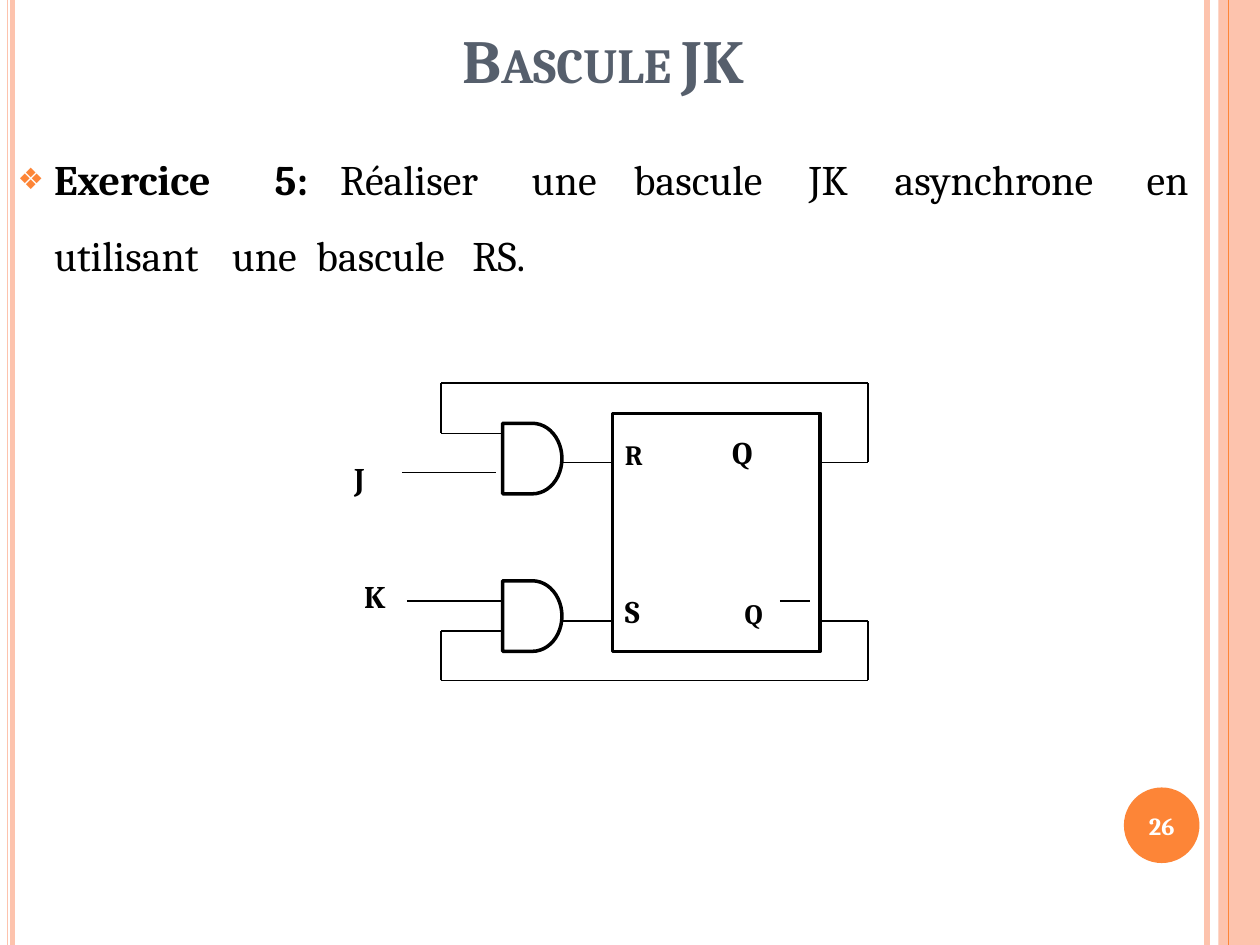
from dataclasses import dataclass
from itertools import pairwise

from lxml.etree import SubElement
from pptx import Presentation
from pptx.dml.color import RGBColor
from pptx.enum.shapes import MSO_CONNECTOR, MSO_SHAPE
from pptx.enum.text import MSO_ANCHOR, PP_ALIGN
from pptx.oxml.ns import qn
from pptx.util import Inches, Pt


@dataclass(frozen=True)
class Theme:
    font: str = "Cambria"
    bullet_font: str = "Arial"
    ink: str = "000000"
    title_ink: str = "565F6C"
    accent: str = "FD8537"
    pale: str = "FDC3AD"
    white: str = "FFFFFF"
    title: float = 35
    small_caps: float = 28
    body: float = 24
    label: float = 18
    pin: float = 16
    number: float = 14
    leading: float = 1.08


THEME = Theme()
WIDTH, HEIGHT = 10, 7.5

# Content: title runs, then the words of the exercise as (left, text, bold)
TITLE = [("B", THEME.title), ("ASCULE ", THEME.small_caps), ("JK", THEME.title)]
PAGE_NUMBER = "26"
BULLET, BULLET_INDENT = "❖", 0.29
EXERCISE = [
    [(0.14, "Exercice", True), (2.18, "5:", True), (2.7, "Réaliser", False),
     (4.22, "une", False), (5.03, "bascule", False), (6.42, "JK", False),
     (7.1, "asynchrone", False), (9.1, "en", False)],
    [(0.43, "utilisant", False), (1.84, "une", False),
     (2.51, "bascule", False), (3.75, "RS.", False)],
]
EXERCISE_TOP, EXERCISE_PITCH = 1.26, 0.6

# Page frame: vertical rails as (x, colour, points)
RAILS = [(0.06, THEME.pale, 1), (0.1, THEME.pale, 2.8), (9.58, THEME.pale, 3)]
BAND_LEFT, BAND_LINE = 9.67, 9.75
BADGE = (8.92, 6.25, 0.6, 0.6)

# Circuit: blocks, then wires as chains of corner points
LATCH = (4.86, 3.28, 1.65, 1.89)
LATCH_RIGHT = LATCH[0] + LATCH[2]
GATE_LEFT, GATE_WIDTH, GATE_HEIGHT = 3.99, 0.47, 0.56
GATE_TOPS = (3.36, 4.61)
GATE_RIGHT = GATE_LEFT + GATE_WIDTH
LOOP_LEFT, LOOP_RIGHT = 3.5, 6.89
Q_ROW, NOT_Q_ROW = 3.67, 4.93
WIRES = [
    [(GATE_RIGHT, Q_ROW), (LATCH[0], Q_ROW)],
    [(GATE_RIGHT, NOT_Q_ROW), (LATCH[0], NOT_Q_ROW)],
    [(3.19, 3.75), (3.94, 3.75)],
    [(3.23, 4.77), (GATE_LEFT, 4.77)],
    [(6.19, 4.77), (6.43, 4.77)],
    [(LATCH_RIGHT, Q_ROW), (LOOP_RIGHT, Q_ROW), (LOOP_RIGHT, 3.04),
     (LOOP_LEFT, 3.04), (LOOP_LEFT, 3.44), (GATE_LEFT, 3.44)],
    [(LATCH_RIGHT, NOT_Q_ROW), (LOOP_RIGHT, NOT_Q_ROW), (LOOP_RIGHT, 5.4),
     (LOOP_LEFT, 5.4), (LOOP_LEFT, 5.01), (GATE_LEFT, 5.01)],
]
LABELS = [
    (2.81, 3.67, "J", THEME.label), (2.89, 4.61, "K", THEME.label),
    (4.96, 3.5, "R", THEME.pin), (5.81, 3.47, "Q", THEME.label),
    (4.96, 4.73, "S", THEME.label), (5.91, 4.76, "Q", THEME.pin),
]


def rgb(value):
    return RGBColor.from_string(value)


def add_line(page, start, end, color=THEME.ink, points=1):
    ends = [Inches(value) for value in (*start, *end)]
    line = page.shapes.add_connector(MSO_CONNECTOR.STRAIGHT, *ends)
    line.line.color.rgb = rgb(color)
    line.line.width = Pt(points)
    properties = line._element.find(qn("p:spPr"))
    SubElement(properties, qn("a:effectLst"))


def add_block(page, kind, place, fill=None):
    """A filled block without outline, or an outlined one without fill."""
    block = page.shapes.add_shape(kind, *[Inches(value) for value in place])
    block.shadow.inherit = False
    if fill:
        block.fill.solid()
        block.fill.fore_color.rgb = rgb(fill)
        block.line.fill.background()
    else:
        block.fill.background()
        block.line.color.rgb = rgb(THEME.ink)
        block.line.width = Pt(2)
    return block


def clear_margins(frame):
    frame.margin_left = frame.margin_right = 0
    frame.margin_top = frame.margin_bottom = 0


def style_span(span, size, color, bold):
    span.font.name = THEME.font
    span.font.size = Pt(size)
    span.font.bold = bold
    span.font.color.rgb = rgb(color)


def add_bullet(para):
    properties = para._p.get_or_add_pPr()
    properties.set("marL", str(Inches(BULLET_INDENT)))
    properties.set("indent", str(-Inches(BULLET_INDENT)))
    color = SubElement(properties, qn("a:buClr"))
    SubElement(color, qn("a:srgbClr"), val=THEME.accent)
    SubElement(properties, qn("a:buSzPct"), val="70000")
    SubElement(properties, qn("a:buFont"), typeface=THEME.bullet_font)
    SubElement(properties, qn("a:buChar"), char=BULLET)


def add_text(page, left, top, text, size, bold=True, bullet=False):
    indent = BULLET_INDENT if bullet else 0
    width = indent + len(text) * size * 0.6 / 72
    height = size * THEME.leading / 72
    box = page.shapes.add_textbox(
        Inches(left), Inches(top), Inches(width), Inches(height))
    clear_margins(box.text_frame)
    box.text_frame.word_wrap = bullet
    para = box.text_frame.paragraphs[0]
    para.text = text
    para.line_spacing = Pt(round(size * THEME.leading, 1))
    if bullet:
        add_bullet(para)
    style_span(para.runs[0], size, THEME.ink, bold)


def add_title(page):
    title = page.shapes.title
    title.left, title.top = Inches(3.67), Inches(0.25)
    title.width, title.height = Inches(3.08), Inches(0.51)
    frame = title.text_frame
    clear_margins(frame)
    frame.word_wrap = False
    frame.vertical_anchor = MSO_ANCHOR.TOP
    para = frame.paragraphs[0]
    para.alignment = PP_ALIGN.LEFT
    para.line_spacing = Pt(37)
    for text, size in TITLE:
        span = para.add_run()
        span.text = text
        style_span(span, size, THEME.title_ink, True)


def add_frame(page):
    for x, color, points in RAILS:
        add_line(page, (x, 0), (x, HEIGHT), color, points)
    band = (BAND_LEFT, 0, WIDTH - BAND_LEFT, HEIGHT)
    add_block(page, MSO_SHAPE.RECTANGLE, band, THEME.pale)
    add_line(page, (BAND_LINE, 0), (BAND_LINE, HEIGHT), THEME.accent, 0.75)
    badge = add_block(page, MSO_SHAPE.OVAL, BADGE, THEME.accent)
    frame = badge.text_frame
    clear_margins(frame)
    frame.text = PAGE_NUMBER
    frame.vertical_anchor = MSO_ANCHOR.MIDDLE
    frame.paragraphs[0].alignment = PP_ALIGN.CENTER
    style_span(frame.paragraphs[0].runs[0], THEME.number, THEME.white, True)


def add_exercise(page):
    for row, words in enumerate(EXERCISE):
        top = EXERCISE_TOP + row * EXERCISE_PITCH
        for column, (left, text, bold) in enumerate(words):
            add_text(page, left, top, text, THEME.body, bold,
                     bullet=row == column == 0)


def add_circuit(page):
    add_block(page, MSO_SHAPE.RECTANGLE, LATCH)
    for top in GATE_TOPS:
        add_block(page, MSO_SHAPE.FLOWCHART_DELAY,
                  (GATE_LEFT, top, GATE_WIDTH, GATE_HEIGHT))
    for wire in WIRES:
        for start, end in pairwise(wire):
            add_line(page, start, end)
    for label in LABELS:
        add_text(page, *label)


def main():
    deck = Presentation()
    deck.slide_width, deck.slide_height = Inches(WIDTH), Inches(HEIGHT)
    page = deck.slides.add_slide(deck.slide_layouts[5])
    add_frame(page)
    add_title(page)
    add_exercise(page)
    add_circuit(page)
    deck.save("out.pptx")


if __name__ == "__main__":
    main()
